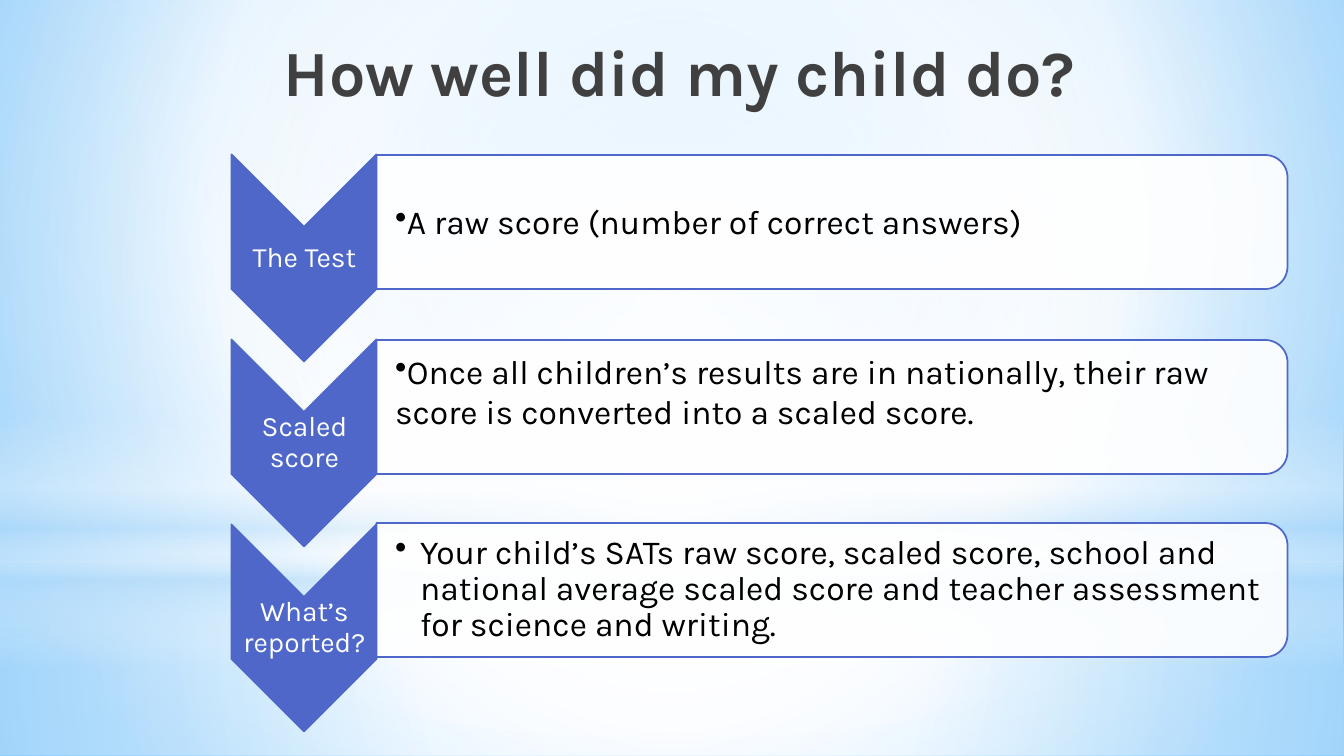
from lxml import etree
from pptx import Presentation
from pptx.dml.color import RGBColor
from pptx.enum.shapes import MSO_SHAPE
from pptx.enum.text import MSO_ANCHOR, MSO_AUTO_SIZE, PP_ALIGN
from pptx.oxml.ns import nsdecls, qn
from pptx.oxml import parse_xml
from pptx.util import Emu, Pt

PX = 914400 / 100.8
PAGE_WIDTH, PAGE_HEIGHT = 1344, 756
FONT = "Karla"
COLORS = {
    "title": "404040",
    "text": "000000",
    "white": "FFFFFF",
    "accent": "4E67C8",
    "haze": "B4DCFA",
    "sky": "9ED5FF",
    "deep sky": "5BB9FF",
}
RECTANGLE, ELLIPSE = MSO_SHAPE.RECTANGLE, MSO_SHAPE.OVAL
CHEVRON, PANEL = MSO_SHAPE.CHEVRON, MSO_SHAPE.ROUND_2_SAME_RECTANGLE
LEFT, CENTER, RIGHT = PP_ALIGN.LEFT, PP_ALIGN.CENTER, PP_ALIGN.RIGHT
TOP, MIDDLE = MSO_ANCHOR.TOP, MSO_ANCHOR.MIDDLE

CENTERED = (50, 50, 50, 50)
# Gradient stops: position, colour, opacity (all in percent)
SKY = [(0, "sky", 100), (60, "white", 100), (100, "deep sky", 100)]
BACKDROP = [
    (RECTANGLE, 562, 194, CENTERED,
     [(0, "white", 91), (37, "white", 76), (100, "haze", 79)]),
    (RECTANGLE, 0, 562, CENTERED,
     [(0, "white", 89), (48, "white", 62), (100, "haze", 79)]),
    (RECTANGLE, 415, 252, None,
     [(0, "white", 0), (29, "white", 30), (45, "haze", 40),
      (55, "white", 26), (65, "haze", 60), (100, "white", 0)]),
    (ELLIPSE, 176, 562, CENTERED, [(0, "white", 100), (56, "white", 0)]),
]

FIRST_CHEVRON_MIDDLE, STEP_PITCH = 258, 185
# Label, text, rise of the panel above the chevron's middle, panel text format
STEPS = [
    ("The Test", "A raw score (number of correct answers)", 36, {}),
    ("Scaled score",
     "Once all children’s results are in nationally, their raw score is "
     "converted into a scaled score.", 36, {"anchor": TOP, "inset": (19, 5, 2, 2)}),
    ("What’s reported?",
     "Your child’s SATs raw score, scaled score, school and national average "
     "scaled score and teacher assessment for science and writing.", 38,
     {"hanging": 25, "line_spacing": 0.9}),
]


def px(length):
    return Emu(round(length * PX))


def rgb(name):
    return RGBColor.from_string(COLORS[name])


def set_gradient(element, stops, focus=None):
    """Replace the element's first solid fill: radial to focus, or top to bottom."""
    stop_xml = "".join(
        f'<a:gs pos="{position * 1000}"><a:srgbClr val="{COLORS[color]}">'
        f'<a:alpha val="{opacity * 1000}"/></a:srgbClr></a:gs>'
        for position, color, opacity in stops)
    if focus:
        left, top, right, bottom = (side * 1000 for side in focus)
        direction = (f'<a:path path="circle"><a:fillToRect l="{left}" t="{top}" '
                     f'r="{right}" b="{bottom}"/></a:path>')
    else:
        direction = '<a:lin ang="5400000" scaled="0"/>'
    gradient = parse_xml(f'<a:gradFill {nsdecls("a")} rotWithShape="1">'
                         f'<a:gsLst>{stop_xml}</a:gsLst>{direction}</a:gradFill>')
    solid = element.find(".//" + qn("a:solidFill"))
    solid.getparent().replace(solid, gradient)


def add_shape(page, kind, left, top, width, height, fill="white", line=None):
    shape = page.shapes.add_shape(kind, px(left), px(top), px(width), px(height))
    shape.shadow.inherit = False
    shape.fill.solid()
    shape.fill.fore_color.rgb = rgb(fill)
    if line:
        shape.line.color.rgb = rgb(line)
        shape.line.width = Pt(1.25)
    else:
        shape.line.fill.background()
    return shape


def add_turned_shape(page, kind, center, middle, width, height, **colors):
    """Add a shape turned by 90 degrees; width and height are as seen."""
    shape = add_shape(page, kind, center - height / 2, middle - width / 2,
                      height, width, **colors)
    shape.rotation = 90
    return shape


def set_opacity(shape, percent):
    color = shape.fill._xPr.find(qn("a:solidFill"))[0]
    etree.SubElement(color, qn("a:alpha"), val=str(percent * 1000))


def write_text(box, text, size, color, align=LEFT, anchor=MIDDLE, bold=False,
               line_spacing=1.0, inset=(10, 5, 10, 5), bullet=None, hanging=0):
    frame = box.text_frame
    frame.word_wrap = True
    frame.auto_size = MSO_AUTO_SIZE.NONE
    frame.vertical_anchor = anchor
    (frame.margin_left, frame.margin_top,
     frame.margin_right, frame.margin_bottom) = map(px, inset)
    para = frame.paragraphs[0]
    para.alignment = align
    para.line_spacing = line_spacing
    span = para.add_run()
    span.text = text
    span.font.name = FONT
    span.font.size = Pt(size)
    span.font.bold = bold
    span.font.color.rgb = rgb(color)
    if bullet:
        properties = para._p.get_or_add_pPr()
        properties.set("marL", str(px(hanging)))
        properties.set("indent", str(-px(hanging)))
        etree.SubElement(properties, qn("a:buChar"), char=bullet)


def add_text(page, text, left, top, width, height, **text_format):
    box = page.shapes.add_textbox(px(left), px(top), px(width), px(height))
    write_text(box, text, **text_format)


def add_backdrop(page):
    page.background.fill.solid()
    set_gradient(page.element, SKY, (20, 10, 20, 60))
    for kind, top, height, focus, stops in BACKDROP:
        shape = add_shape(page, kind, 0, top, PAGE_WIDTH, height)
        set_gradient(shape.element.spPr, stops, focus)


def add_title(page, text):
    title = page.shapes.title
    title.left, title.top, title.width, title.height = map(px, (102, 28, 983, 85))
    write_text(title, text, size=46, color="title", align=RIGHT, bold=True)
    # Bring the title in front of the backdrop
    title.element.getparent().append(title.element)


def add_step(page, middle, label, text, rise, text_format):
    add_turned_shape(page, CHEVRON, 304, middle, 145, 207,
                     fill="accent", line="accent")
    add_text(page, label, 232, middle - 31, 145, 62, size=20, color="white",
             align=CENTER, line_spacing=0.9, inset=(1, 1, 1, 1))
    panel_middle = middle - rise
    panel = add_turned_shape(page, PANEL, 832, panel_middle, 911, 134, line="accent")
    set_opacity(panel, 90)
    panel_format = {"size": 24, "color": "text", "bullet": "•",
                    "inset": (19, 2, 2, 2), **text_format}
    add_text(page, text, 376, panel_middle - 61, 904, 121, **panel_format)


def main():
    deck = Presentation()
    deck.slide_width, deck.slide_height = px(PAGE_WIDTH), px(PAGE_HEIGHT)
    page = deck.slides.add_slide(deck.slide_layouts[5])
    add_backdrop(page)
    add_title(page, "How well did my child do?")
    for index, step in enumerate(STEPS):
        add_step(page, FIRST_CHEVRON_MIDDLE + index * STEP_PITCH, *step)
    deck.save("out.pptx")


if __name__ == "__main__":
    main()
